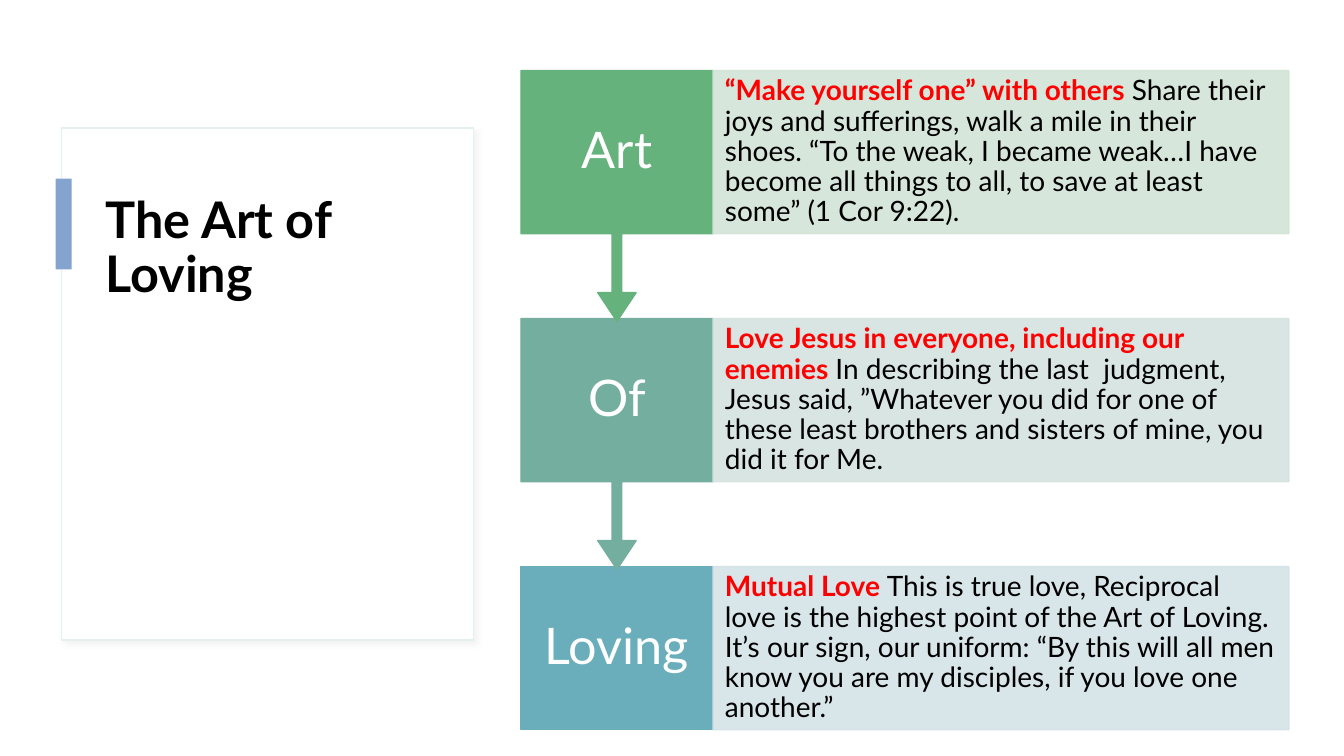
from dataclasses import dataclass

from lxml.etree import SubElement
from pptx import Presentation
from pptx.dml.color import RGBColor
from pptx.enum.shapes import MSO_SHAPE as Shape
from pptx.enum.text import MSO_ANCHOR as Anchor, MSO_AUTO_SIZE as AutoSize, PP_ALIGN as Align
from pptx.oxml.ns import qn
from pptx.util import Cm, Pt


@dataclass(frozen=True)
class Theme:
    font: str = "Lato"
    heading_size: int = 36
    body_size: int = 20
    paper: str = "FFFFFF"
    ink: str = "000000"
    highlight: str = "FF0000"
    accent: str = "84A4CF"
    frame_line: str = "E4F0F0"
    frame_shadow: str = "D9D9D9"
    steps: tuple = (("65B27D", "D3E4D7"), ("73AE9E", "D5E3DF"), ("69AEBA", "D4E3E7"))


@dataclass(frozen=True)
class Box:
    left: float
    top: float
    width: float
    height: float

    def lengths(self):
        return Cm(self.left), Cm(self.top), Cm(self.width), Cm(self.height)


THEME = Theme()
STEPS = (
    ("Art", "“Make yourself one” with others",
     " Share their joys and sufferings, walk a mile in their shoes. “To the weak, I became weak…"
     "I have become all things to all, to save at least some” (1 Cor 9:22)."),
    ("Of", "Love Jesus in everyone, including our enemies ",
     "In describing the last  judgment, Jesus said, ”Whatever you did for one of these least "
     "brothers and sisters of mine, you did it for Me."),
    ("Loving", "Mutual Love ",
     "This is true love, Reciprocal love is the highest point of the Art of Loving. It’s our sign, "
     "our uniform: “By this will all men know you are my disciples, if you love one another.”"),
)


def add_block(slide, kind, box, fill, line=None):
    block = slide.shapes.add_shape(kind, *box.lengths())
    block.shadow.inherit = False
    block.fill.solid()
    block.fill.fore_color.rgb = RGBColor.from_string(fill)
    if line:
        block.line.color.rgb = RGBColor.from_string(line)
        block.line.width = Pt(1)
    else:
        block.line.fill.background()
    return block


def set_opacity(block, percent):
    for color in block.element.spPr.iter(qn("a:srgbClr")):
        SubElement(color, qn("a:alpha"), val=str(percent * 1000))


def add_soft_shadow(block, color):
    effects = block.element.spPr.find(qn("a:effectLst"))
    shadow = SubElement(effects, qn("a:outerShdw"), blurRad=str(Pt(4)), dist=str(Pt(3)),
                        dir=str(45 * 60000), algn="tl", rotWithShape="0")
    tint = SubElement(shadow, qn("a:srgbClr"), val=color)
    SubElement(tint, qn("a:alpha"), val="30000")


def set_words(frame, words, size, align, anchor, side_inset):
    frame.word_wrap = True
    frame.auto_size = AutoSize.NONE
    frame.vertical_anchor = anchor
    frame.margin_left = frame.margin_right = Cm(side_inset)
    paragraph = frame.paragraphs[0]
    paragraph.alignment = align
    paragraph.line_spacing = 0.9
    for text, color, bold in words:
        run = paragraph.add_run()
        run.text = text
        run.font.name = THEME.font
        run.font.size = Pt(size)
        run.font.bold = bold
        run.font.color.rgb = RGBColor.from_string(color)


def add_title_panel(slide, box):
    panel = add_block(slide, Shape.RECTANGLE, box, THEME.paper, THEME.frame_line)
    add_soft_shadow(panel, THEME.frame_shadow)
    title = slide.shapes.title
    panel.element.addnext(title.element)
    title_box = Box(box.left + 0.86, box.top + 1.55, box.width - 1.78, box.height - 3.12)
    title.left, title.top, title.width, title.height = title_box.lengths()
    set_words(title.text_frame, [("The Art of Loving", THEME.ink, True)],
              THEME.heading_size, Align.LEFT, Anchor.TOP, 0.25)
    add_block(slide, Shape.RECTANGLE, Box(box.left - 0.15, box.top + 1.27, 0.41, 2.29), THEME.accent)


def add_step(slide, box, step, colors, arrow_height):
    label, lead, detail = step
    strong, pale = colors
    label_width = box.width / 4
    kind = Shape.DOWN_ARROW_CALLOUT if arrow_height else Shape.RECTANGLE
    label_box = Box(box.left, box.top, label_width, box.height + arrow_height)
    name = add_block(slide, kind, label_box, strong, strong)
    if arrow_height:
        for index, value in enumerate((0.05, 0.1, 0.15, box.height / label_box.height)):
            name.adjustments[index] = value
    set_words(name.text_frame, [(label, THEME.paper, False)],
              THEME.heading_size, Align.CENTER, Anchor.MIDDLE, 0.36)

    detail_box = Box(box.left + label_width, box.top, box.width - label_width, box.height)
    panel = add_block(slide, Shape.RECTANGLE, detail_box, pale, pale)
    set_opacity(panel, 90)
    set_words(panel.text_frame, [(lead, THEME.highlight, True), (detail, THEME.ink, False)],
              THEME.body_size, Align.LEFT, Anchor.MIDDLE, 0.3)


def add_steps(slide, box):
    step_height, pitch, overlap = 4.11, 6.25, 0.07
    last = len(STEPS) - 1
    for index in range(last, -1, -1):
        arrow_height = pitch - step_height + overlap if index < last else 0
        step_box = Box(box.left, box.top + index * pitch, box.width, step_height)
        add_step(slide, step_box, STEPS[index], THEME.steps[index], arrow_height)


def main():
    deck = Presentation()
    deck.slide_width, deck.slide_height = Cm(33.87), Cm(19.05)
    slide = deck.slides.add_slide(deck.slide_layouts[5])
    add_title_panel(slide, Box(1.55, 3.23, 10.39, 12.9))
    add_steps(slide, Box(13.13, 1.78, 19.35, 16.61))
    deck.save("out.pptx")


if __name__ == "__main__":
    main()
